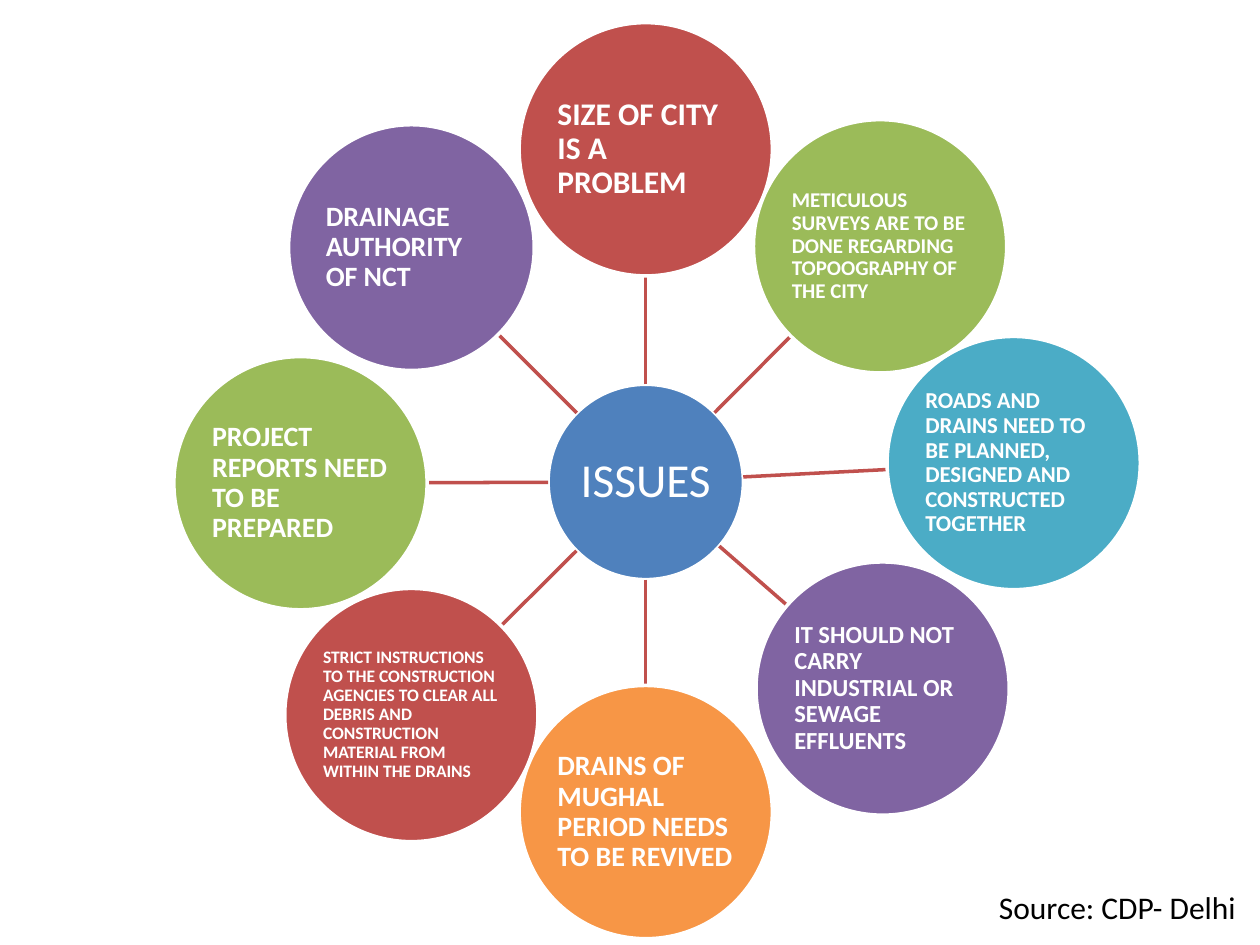
import math

import pptx
import pptx.dml.color
import pptx.enum.shapes
import pptx.enum.text
import pptx.util
from pptx.util import Inches
from lxml import etree

FONT = "Calibri"
RED, GREEN, PURPLE = "C0504D", "9BBB59", "8064A2"
TEAL, ORANGE, BLUE, WHITE = "4BACC6", "F79646", "4F81BD", "FFFFFF"
LEFT = pptx.enum.text.PP_ALIGN.LEFT
CENTER = pptx.enum.text.PP_ALIGN.CENTER

# Hub: left, top, diameter
HUB = (4.35, 3.05, 1.55)

# Issues: left, top, diameter, fill, text size, text
ISSUES = [
    (4.12, 0.18, 2.01, RED, 18, "SIZE OF CITY IS A PROBLEM"),
    (5.98, 0.95, 2.01, GREEN, 12,
     "METICULOUS SURVEYS ARE TO BE DONE REGARDING TOPOOGRAPHY OF THE CITY"),
    (6.00, 4.46, 2.01, PURPLE, 14,
     "IT SHOULD NOT CARRY INDUSTRIAL OR SEWAGE EFFLUENTS"),
    (7.04, 2.67, 2.01, TEAL, 13,
     "ROADS AND DRAINS NEED TO BE PLANNED, DESIGNED AND CONSTRUCTED TOGETHER"),
    (4.12, 5.44, 2.01, ORANGE, 16,
     "DRAINS OF MUGHAL PERIOD NEEDS TO BE REVIVED"),
    (2.26, 4.67, 2.01, RED, 10,
     "STRICT INSTRUCTIONS TO THE CONSTRUCTION AGENCIES TO CLEAR ALL DEBRIS "
     "AND CONSTRUCTION MATERIAL FROM WITHIN THE DRAINS"),
    (1.38, 2.83, 2.01, GREEN, 16, "PROJECT REPORTS NEED TO BE PREPARED"),
    (2.29, 0.99, 1.95, PURPLE, 16, "DRAINAGE AUTHORITY OF NCT"),
]


def rgb(value):
    return pptx.dml.color.RGBColor.from_string(value)


def set_text(tf, text, size, color, bold=False, align=LEFT):
    tf.text = text
    tf.word_wrap = True
    p = tf.paragraphs[0]
    p.alignment = align
    r = p.runs[0]
    r.font.name = FONT
    r.font.size = pptx.util.Pt(size)
    r.font.bold = bold
    r.font.color.rgb = rgb(color)


def add_circle(s, box, fill, size, text, bold=True, align=LEFT):
    left, top, diameter = box
    sp = s.shapes.add_shape(
        pptx.enum.shapes.MSO_SHAPE.OVAL,
        Inches(left), Inches(top), Inches(diameter), Inches(diameter))
    sp.shadow.inherit = False
    sp.fill.solid()
    sp.fill.fore_color.rgb = rgb(fill)
    sp.line.color.rgb = rgb(WHITE)
    sp.line.width = pptx.util.Pt(2)
    tf = sp.text_frame
    tf.margin_left = tf.margin_right = Inches(0.01)
    tf.margin_top = tf.margin_bottom = Inches(0.01)
    tf.vertical_anchor = pptx.enum.text.MSO_ANCHOR.MIDDLE
    set_text(tf, text, size, WHITE, bold, align)
    tf.paragraphs[0].line_spacing = 0.9


def add_spoke(s, hub, box):
    """Join the rims of two circles along the line between their centres."""
    r1, r2 = hub[2] / 2, box[2] / 2
    x1, y1 = hub[0] + r1, hub[1] + r1
    x2, y2 = box[0] + r2, box[1] + r2
    distance = math.hypot(x2 - x1, y2 - y1)
    ux, uy = (x2 - x1) / distance, (y2 - y1) / distance
    line = s.shapes.add_connector(
        pptx.enum.shapes.MSO_CONNECTOR.STRAIGHT,
        Inches(x1 + r1 * ux), Inches(y1 + r1 * uy),
        Inches(x2 - r2 * ux), Inches(y2 - r2 * uy))
    line.line.color.rgb = rgb(RED)
    line.line.width = pptx.util.Pt(2)
    etree.SubElement(line._element.spPr, pptx.oxml.ns.qn("a:effectLst"))


def add_issue_wheel(s, hub):
    add_circle(s, hub, BLUE, 27, "ISSUES", bold=False, align=CENTER)
    for left, top, diameter, fill, size, text in ISSUES:
        box = (left, top, diameter)
        add_spoke(s, hub, box)
        add_circle(s, box, fill, size, text)


def add_source(s, left, top, width, height):
    sp = s.shapes.add_textbox(
        Inches(left), Inches(top), Inches(width), Inches(height))
    set_text(sp.text_frame, "Source: CDP- Delhi", 18, "000000")


def main():
    prs = pptx.Presentation()
    prs.slide_width, prs.slide_height = Inches(10), Inches(7.5)
    s = prs.slides.add_slide(prs.slide_layouts[6])
    # Hub, spokes and issues
    add_issue_wheel(s, HUB)
    # Source note
    add_source(s, 7.83, 7, 2.26, 0.4)
    prs.save("out.pptx")


if __name__ == "__main__":
    main()
